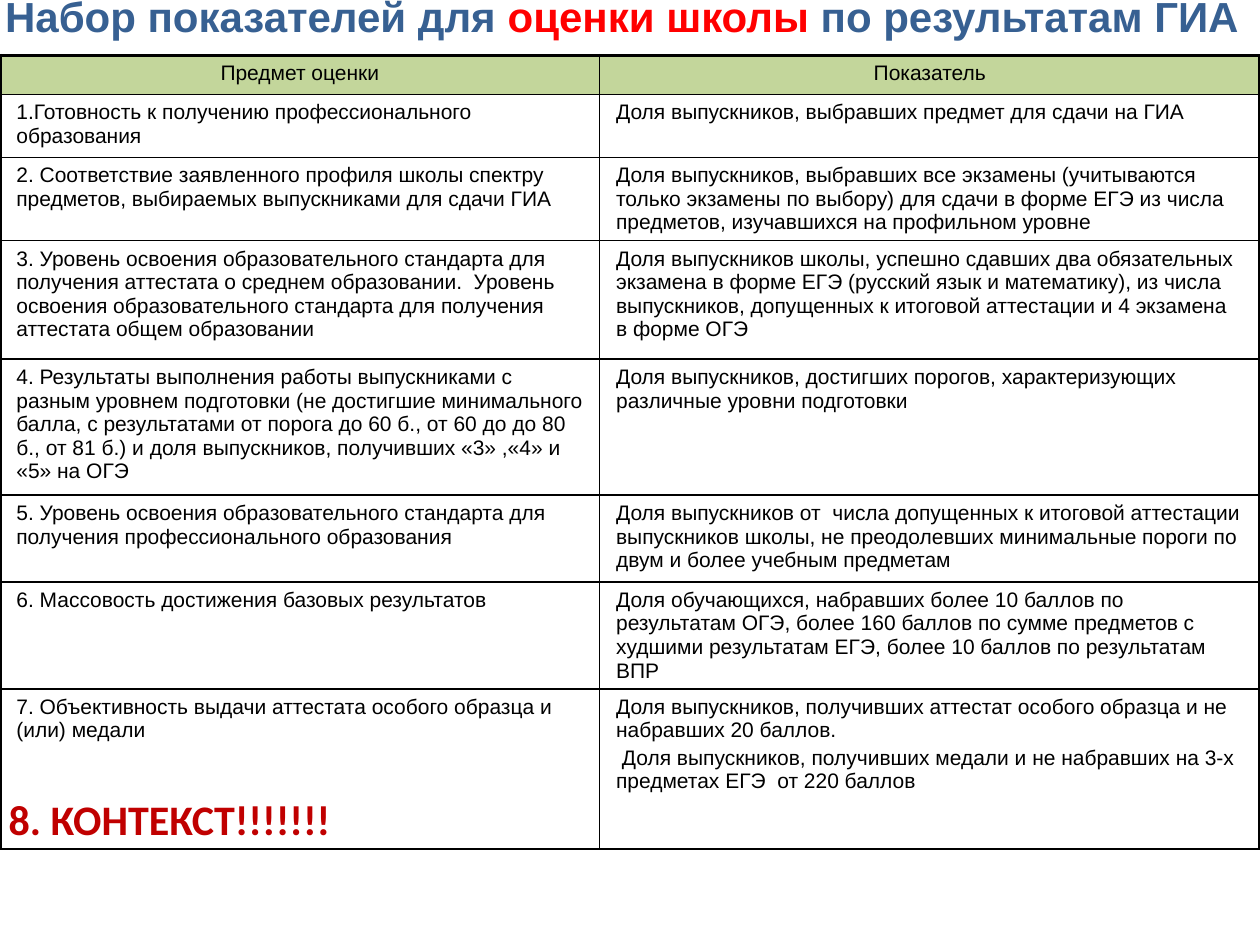
from typing import NamedTuple

from lxml.etree import SubElement
from pptx import Presentation
from pptx.dml.color import RGBColor
from pptx.enum.text import MSO_ANCHOR, MSO_AUTO_SIZE, PP_ALIGN
from pptx.oxml.ns import qn
from pptx.util import Inches, Pt

BLUE = RGBColor(0x37, 0x60, 0x92)
RED = RGBColor(0xFF, 0x00, 0x00)
DARK_RED = RGBColor(0xC0, 0x00, 0x00)
GREEN = RGBColor(0xC3, 0xD6, 0x9B)
BLACK = RGBColor(0x00, 0x00, 0x00)

THIN, THICK = Pt(1), Pt(2.25)
COLUMN_WIDTHS = (4.76, 5.24)


class Criterion(NamedTuple):
    height: float
    subject: str
    indicator: str  # one paragraph per line


HEADER = Criterion(0.31, "Предмет оценки", "Показатель")
CRITERIA = [
    Criterion(0.5, "1.Готовность к получению профессионального образования",
              "Доля выпускников, выбравших предмет для сдачи на ГИА"),
    Criterion(0.65, "2. Соответствие заявленного профиля школы спектру предметов, "
              "выбираемых выпускниками для сдачи ГИА",
              "Доля выпускников, выбравших все экзамены (учитываются только экзамены "
              "по выбору) для сдачи в форме ЕГЭ из числа предметов, изучавшихся на "
              "профильном уровне"),
    Criterion(0.94, "3. Уровень освоения образовательного стандарта для получения "
              "аттестата о среднем образовании.  Уровень освоения образовательного "
              "стандарта для получения аттестата общем образовании",
              "Доля выпускников школы, успешно сдавших два обязательных экзамена в "
              "форме ЕГЭ (русский язык и математику), из числа выпускников, допущенных "
              "к итоговой аттестации и 4 экзамена в форме ОГЭ"),
    Criterion(1.08, "4. Результаты выполнения работы выпускниками с разным уровнем "
              "подготовки (не достигшие минимального балла, с результатами от порога "
              "до 60 б., от 60 до до 80 б., от 81 б.) и доля выпускников, получивших "
              "«3» ,«4» и «5» на ОГЭ",
              "Доля выпускников, достигших порогов, характеризующих различные уровни "
              "подготовки"),
    Criterion(0.69, "5. Уровень освоения образовательного стандарта для получения "
              "профессионального образования",
              "Доля выпускников от  числа допущенных к итоговой аттестации выпускников "
              "школы, не преодолевших минимальные пороги по двум и более учебным "
              "предметам"),
    Criterion(0.84, "6. Массовость достижения базовых результатов",
              "Доля обучающихся, набравших более 10 баллов по результатам ОГЭ, более "
              "160 баллов по сумме предметов с худшими результатам ЕГЭ, более 10 "
              "баллов по результатам ВПР"),
    Criterion(1.27, "7. Объективность выдачи аттестата особого образца и (или) медали",
              "Доля выпускников, получивших аттестат особого образца и не набравших "
              "20 баллов.\n Доля выпускников, получивших медали и не набравших на "
              "3-х предметах ЕГЭ  от 220 баллов"),
]


def add_title(slide) -> None:
    title = slide.shapes.title
    title.left, title.top = Inches(0), Inches(-0.11)
    title.width, title.height = Inches(10), Inches(0.47)
    frame = title.text_frame
    frame.word_wrap = True
    frame.auto_size = MSO_AUTO_SIZE.NONE
    frame.vertical_anchor = MSO_ANCHOR.MIDDLE
    frame.margin_left = frame.margin_right = Inches(0.04)
    frame.margin_top = frame.margin_bottom = Inches(0.04)
    heading = frame.paragraphs[0]
    heading.alignment = PP_ALIGN.JUSTIFY
    for words, color in (("Набор показателей для ", BLUE), ("оценки школы ", RED),
                         ("по результатам ГИА", BLUE)):
        run = heading.add_run()
        run.text = words
        run.font.color.rgb = color
    heading.font.name, heading.font.size, heading.font.bold = "Arial", Pt(24), True


def set_borders(cell, left: int, right: int, top: int, bottom: int) -> None:
    properties = cell._tc.get_or_add_tcPr()
    for side, width in zip("LRTB", (left, right, top, bottom)):
        line = SubElement(properties, qn(f"a:ln{side}"), w=str(width))
        SubElement(SubElement(line, qn("a:solidFill")), qn("a:srgbClr"), val=str(BLACK))


def fill_cell(cell, text: str, is_header: bool, is_first_column: bool) -> None:
    set_borders(cell, THICK if is_first_column else THIN,
                THIN if is_first_column else THICK,
                THICK if is_header else THIN, THIN)
    if is_header:
        cell.fill.solid()
        cell.fill.fore_color.rgb = GREEN
    else:
        cell.fill.background()
    cell.margin_left = cell.margin_right = Inches(0.13)
    cell.margin_top = cell.margin_bottom = Inches(0.05)
    cell.text = text
    for index, paragraph in enumerate(cell.text_frame.paragraphs):
        paragraph.alignment = PP_ALIGN.CENTER if is_header else PP_ALIGN.LEFT
        if index:
            paragraph.space_before = Pt(2.4)
        paragraph.font.name, paragraph.font.size = "Arial", Pt(12)
        paragraph.font.bold = False
        paragraph.font.color.rgb = BLACK


def add_criteria_table(slide) -> None:
    rows = [HEADER, *CRITERIA]
    table = slide.shapes.add_table(
        len(rows), len(COLUMN_WIDTHS), Inches(0), Inches(0.44), Inches(10),
        Inches(sum(row.height for row in rows))).table
    table.horz_banding = False
    for column, width in zip(table.columns, COLUMN_WIDTHS):
        column.width = Inches(width)
    for r, row in enumerate(rows):
        table.rows[r].height = Inches(row.height)
        for c, text in enumerate((row.subject, row.indicator)):
            fill_cell(table.cell(r, c), text, r == 0, c == 0)


def add_context(slide) -> None:
    frame = slide.shapes.add_textbox(
        Inches(-0.03), Inches(6.25), Inches(4.61), Inches(0.5)).text_frame
    frame.word_wrap = True
    frame.auto_size = MSO_AUTO_SIZE.SHAPE_TO_FIT_TEXT
    context = frame.paragraphs[0]
    context.text = "8. КОНТЕКСТ!!!!!!!"
    context.font.name, context.font.size, context.font.bold = "Calibri", Pt(24), True
    context.font.color.rgb = DARK_RED


def main() -> None:
    presentation = Presentation()
    presentation.slide_width, presentation.slide_height = Inches(10), Inches(7.5)
    slide = presentation.slides.add_slide(presentation.slide_layouts[5])
    add_title(slide)
    add_criteria_table(slide)
    add_context(slide)
    presentation.save("out.pptx")


if __name__ == "__main__":
    main()
